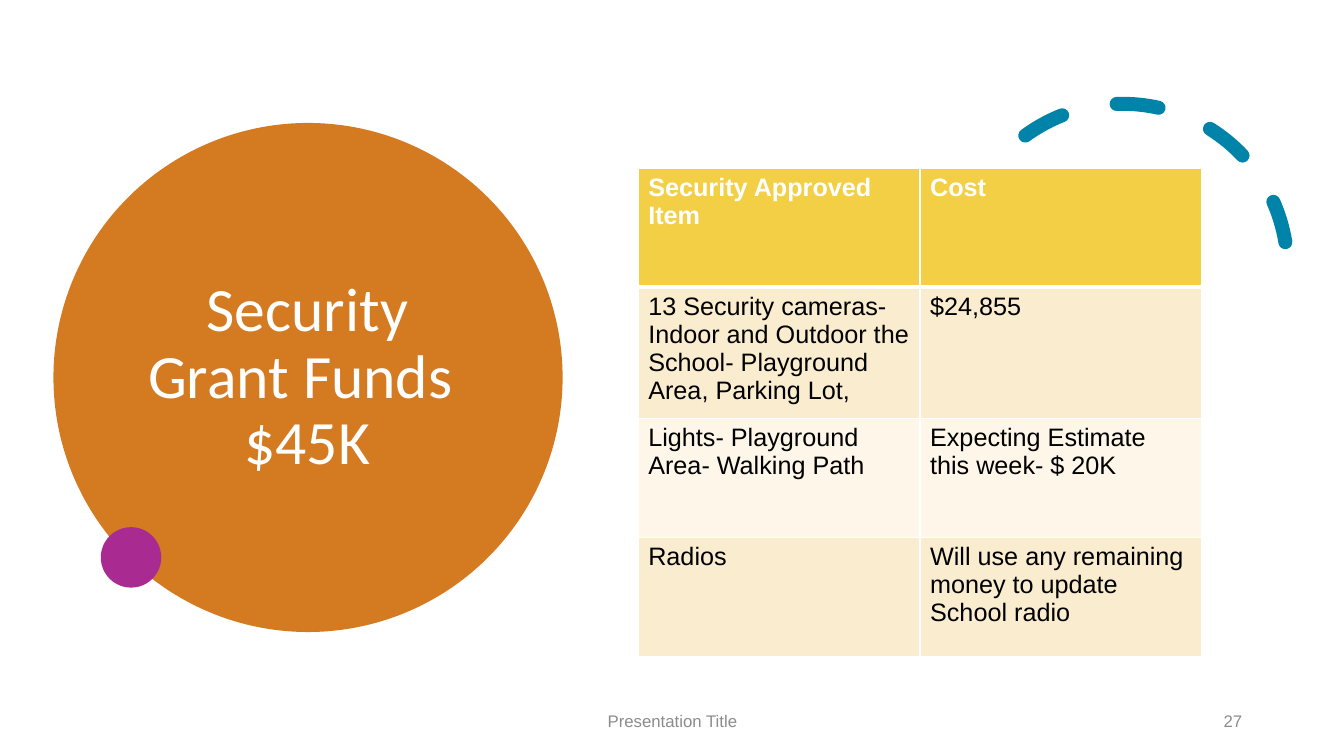
import pptx
import pptx.dml.color
import pptx.enum.dml
import pptx.enum.shapes
import pptx.enum.text
import pptx.oxml
import pptx.oxml.ns
import pptx.util

PX = 9144  # 100 px to the inch
COLORS = {
    "white": "FFFFFF", "black": "000000", "grey": "8C8C8C",
    "orange": "D47B22", "purple": "A92A91", "teal": "0083A9",
    "header": "F3CF45", "band_dark": "FAEDCF", "band_light": "FDF6E9",
}
ALIGN = pptx.enum.text.PP_ALIGN
PRESET = pptx.enum.shapes.MSO_SHAPE
ROWS = [
    ("Security Approved Item", "Cost"),
    ("13 Security cameras- Indoor and Outdoor the School- Playground Area, Parking Lot,", "$24,855"),
    ("Lights- Playground Area- Walking Path", "Expecting Estimate this week- $ 20K"),
    ("Radios", "Will use any remaining money to update School radio"),
]


def color(name):
    return pptx.dml.color.RGBColor.from_string(COLORS[name])


def emu(*lengths):
    return [pptx.util.Emu(length * PX) for length in lengths]


def add_run(paragraph, text, size, font, color_name, bold=False):
    run = paragraph.add_run()
    run.text = text
    run.font.size = pptx.util.Pt(size)
    run.font.name = font
    run.font.bold = bold
    run.font.color.rgb = color(color_name)


def add_text(slide, box, lines, size, font, color_name, align, spacing=1.0):
    frame = slide.shapes.add_textbox(*emu(*box)).text_frame
    frame.word_wrap = True
    frame.vertical_anchor = pptx.enum.text.MSO_ANCHOR.MIDDLE
    paragraph = frame.paragraphs[0]
    paragraph.alignment = align
    paragraph.line_spacing = spacing
    for index, line in enumerate(lines):
        if index:
            paragraph.add_line_break()
        add_run(paragraph, line, size, font, color_name)


def add_disc(slide, left, top, diameter, color_name):
    disc = slide.shapes.add_shape(PRESET.OVAL, *emu(left, top, diameter, diameter))
    disc.shadow.inherit = False
    disc.fill.solid()
    disc.fill.fore_color.rgb = color(color_name)
    disc.line.fill.background()


def add_dashed_arc(slide, left, top, diameter):
    arc = slide.shapes.add_shape(PRESET.ARC, *emu(left, top, diameter, diameter))
    arc.shadow.inherit = False
    arc.rotation = 330.2
    arc.adjustments[0] = 158.17
    arc.adjustments[1] = 17.81
    arc.fill.background()
    arc.line.color.rgb = color("teal")
    arc.line.width = pptx.util.Pt(10)
    arc.line.dash_style = pptx.enum.dml.MSO_LINE.DASH
    arc.line._get_or_add_ln().set("cap", "rnd")


def add_title_circle(slide, left, top, diameter):
    add_disc(slide, left, top, diameter, "orange")
    add_disc(slide, left + 47, top + 401, 60, "purple")
    add_text(slide, (left + 75, top + 31, 354, 445), ["Security Grant Funds ", "$45K"],
             44, "Calibri", "white", ALIGN.CENTER, 0.9)


def set_borders(cell, widths):
    properties = cell._tc.get_or_add_tcPr()
    for index, (side, points) in enumerate(widths.items()):
        properties.insert(index, pptx.oxml.parse_xml(
            f'<a:ln{side} {pptx.oxml.ns.nsdecls("a")} w="{pptx.util.Pt(points)}">'
            f'<a:solidFill><a:srgbClr val="{COLORS["white"]}"/></a:solidFill></a:ln{side}>'))


def add_cost_table(slide, left, top, width, row_height):
    box = emu(left, top, width, row_height * len(ROWS))
    table = slide.shapes.add_table(len(ROWS), len(ROWS[0]), *box).table
    fills = ["header", "band_dark", "band_light", "band_dark"]
    for row_index, texts in enumerate(ROWS):
        table.rows[row_index].height = emu(row_height)[0]
        is_header = row_index == 0
        for column_index, text in enumerate(texts):
            cell = table.cell(row_index, column_index)
            cell.fill.solid()
            cell.fill.fore_color.rgb = color(fills[row_index])
            add_run(cell.text_frame.paragraphs[0], text, 18, "Arial",
                    "white" if is_header else "black", is_header)
            set_borders(cell, {"L": 1, "R": 1, "T": 3 if row_index == 1 else 1,
                               "B": 3 if is_header else 1})


def add_footer(slide, top, height):
    add_text(slide, (442, top, 450, height), ["Presentation Title"], 12, "Arial", "grey", ALIGN.CENTER)
    add_text(slide, (942, top, 300, height), ["27"], 12, "Arial", "grey", ALIGN.RIGHT)


def main():
    presentation = pptx.Presentation()
    presentation.slide_width, presentation.slide_height = emu(1333, 750)
    slide = presentation.slides.add_slide(presentation.slide_layouts[6])
    # Decoration and title
    add_dashed_arc(slide, 950, 103, 327)
    add_title_circle(slide, 53, 122, 505)
    # Approved items and footer
    add_cost_table(slide, 633, 167, 559, 118)
    add_footer(slide, 695, 40)
    presentation.save("out.pptx")


if __name__ == "__main__":
    main()
